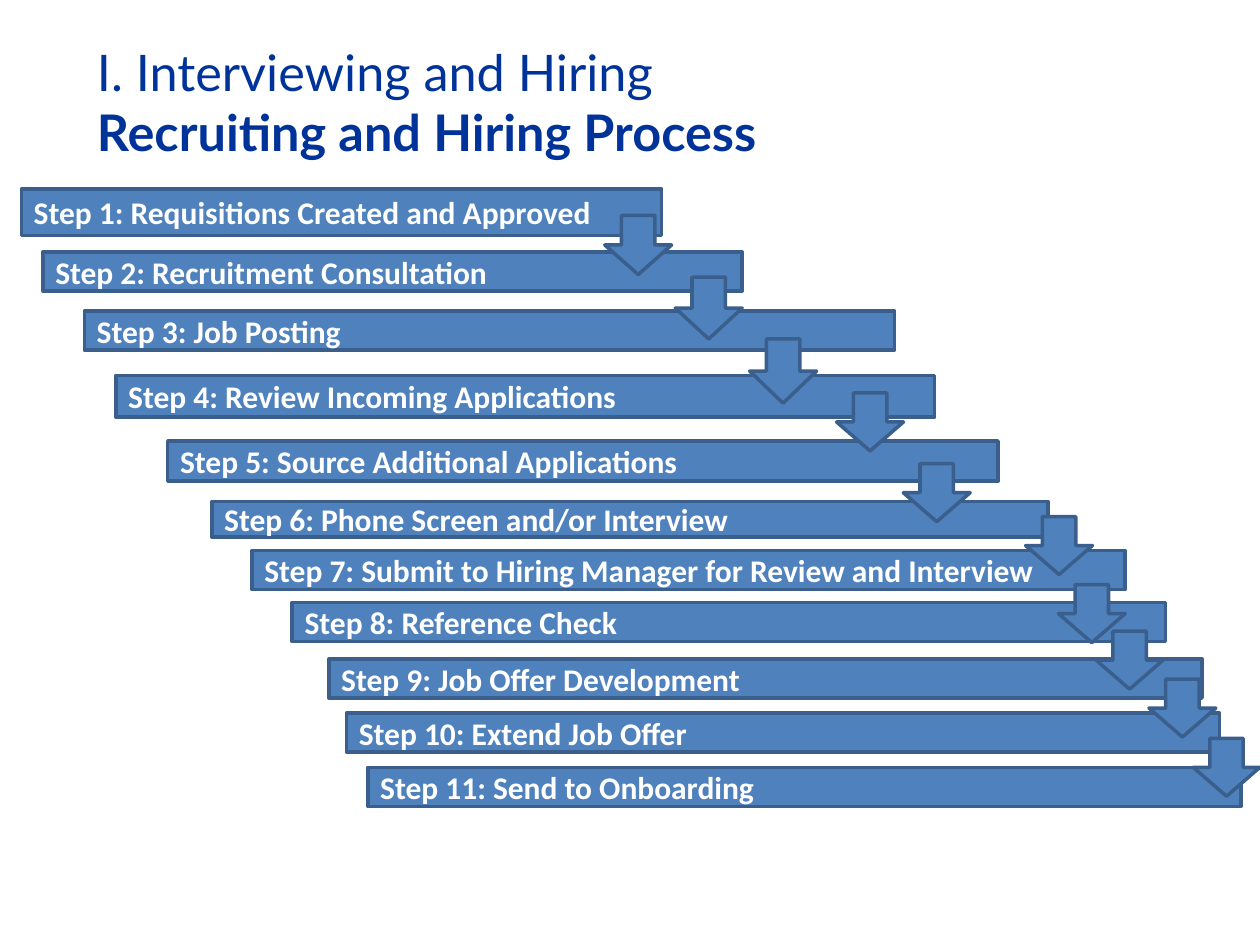
from dataclasses import dataclass
from typing import Any

from pptx import Presentation
from pptx.dml.color import RGBColor
from pptx.enum.shapes import MSO_SHAPE
from pptx.enum.text import MSO_ANCHOR, MSO_AUTO_SIZE, PP_ALIGN
from pptx.util import Pt

COLORS = {"title": "003399", "fill": "4F81BD", "outline": "3A5F8C", "text": "FFFFFF"}

STEPS = [
    ("Requisitions Created and Approved", 12.2, 108, 365.8, 26.6),
    ("Recruitment Consultation", 24.5, 144, 399.6, 22.3),
    ("Job Posting", 48.2, 177.8, 463, 22.3),
    ("Review Incoming Applications", 66.2, 214.6, 468, 23.8),
    ("Source Additional Applications", 95.8, 252, 474.5, 23),
    ("Phone Screen and/or Interview", 121, 286.6, 478, 20.2),
    ("Submit to Hiring Manager for Review and Interview", 144, 314.6, 499, 22.3),
    ("Reference Check", 167, 344.2, 499, 22.3),
    ("Job Offer Development", 187.9, 376.6, 499, 22.3),
    ("Extend Job Offer", 198, 407.5, 499, 22.3),
    ("Send to Onboarding", 210.2, 438.5, 499, 22.3),
]

ARROW_WIDTH = 38.2
ARROWS = [
    (345.6, 123.1, 33.8),
    (385.9, 158.4, 35.3),
    (428.4, 193.7, 36.7),
    (478.1, 224.6, 33.1),
    (516.2, 265, 33.1),
    (586.1, 295.2, 33.1),
    (604.8, 334.1, 33.1),
    (626.4, 360.7, 33.1),
    (656.6, 388.1, 33.1),
    (681.8, 421.9, 33.1),
]


@dataclass
class ProcessPage:
    """Draws the elements of a stepped process on one slide."""

    page: Any
    title_font: str = "Lato"
    step_font: str = "Calibri"

    def style_span(self, span, name, size, color, bold):
        span.font.name = name
        span.font.size = Pt(size)
        span.font.bold = bold
        span.font.color.rgb = RGBColor.from_string(COLORS[color])

    def title(self, section, topic, left, top, width, height):
        box = self.page.shapes.title
        box.left, box.top, box.width, box.height = map(Pt, (left, top, width, height))
        frame = box.text_frame
        frame.text = f"{section}\v{topic}"
        frame.auto_size = MSO_AUTO_SIZE.NONE
        frame.vertical_anchor = MSO_ANCHOR.MIDDLE
        paragraph = frame.paragraphs[0]
        paragraph.alignment = PP_ALIGN.LEFT
        for span, bold in zip(paragraph.runs, (False, True)):
            self.style_span(span, self.title_font, 28.8, "title", bold)

    def block(self, kind, left, top, width, height):
        box = self.page.shapes.add_shape(kind, *map(Pt, (left, top, width, height)))
        box.shadow.inherit = False
        box.fill.solid()
        box.fill.fore_color.rgb = RGBColor.from_string(COLORS["fill"])
        box.line.color.rgb = RGBColor.from_string(COLORS["outline"])
        box.line.width = Pt(2)
        return box

    def step(self, label, left, top, width, height):
        box = self.block(MSO_SHAPE.RECTANGLE, left, top, width, height)
        frame = box.text_frame
        frame.text = label
        frame.word_wrap = True
        frame.vertical_anchor = MSO_ANCHOR.MIDDLE
        paragraph = frame.paragraphs[0]
        paragraph.alignment = PP_ALIGN.LEFT
        self.style_span(paragraph.runs[0], self.step_font, 18, "text", True)

    def arrow(self, left, top, height):
        self.block(MSO_SHAPE.DOWN_ARROW, left, top, ARROW_WIDTH, height)


def main():
    deck = Presentation()
    deck.slide_width, deck.slide_height = Pt(720), Pt(540)
    page = deck.slides.add_slide(deck.slide_layouts[0])
    subtitle = page.placeholders[1].element
    subtitle.getparent().remove(subtitle)

    process = ProcessPage(page)
    process.title("I. Interviewing and Hiring", "Recruiting and Hiring Process",
                  48.2, 30.2, 653.8, 55.4)
    for number, (name, *frame) in enumerate(STEPS, start=1):
        process.step(f"Step {number}: {name}", *frame)
    for arrow in ARROWS:
        process.arrow(*arrow)
    deck.save("out.pptx")


if __name__ == "__main__":
    main()
